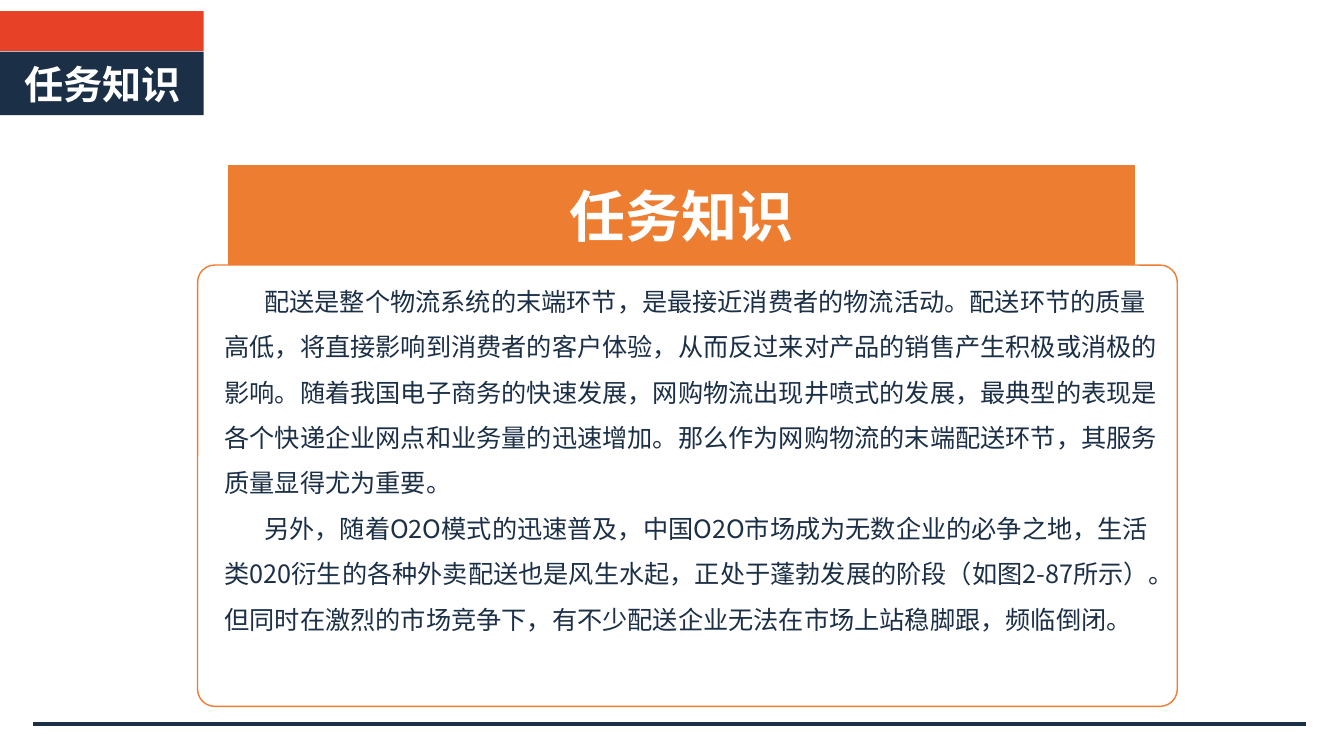
from collections import namedtuple

from lxml.etree import SubElement
from pptx import Presentation
from pptx.dml.color import RGBColor
from pptx.enum.shapes import MSO_CONNECTOR as Connector, MSO_SHAPE as Shape
from pptx.enum.text import MSO_ANCHOR as Anchor, PP_ALIGN as Align
from pptx.oxml.ns import qn
from pptx.util import Cm, Pt

NAVY = RGBColor(0x1B, 0x2F, 0x47)
RED = RGBColor(0xE7, 0x41, 0x27)
ORANGE = RGBColor(0xED, 0x7D, 0x31)
WHITE = RGBColor(0xFF, 0xFF, 0xFF)
FONT = "Noto Sans CJK SC"

HEADING = "任务知识"
PARAGRAPHS = [
    "配送是整个物流系统的末端环节，是最接近消费者的物流活动。配送环节的质量高低，"
    "将直接影响到消费者的客户体验，从而反过来对产品的销售产生积极或消极的影响。"
    "随着我国电子商务的快速发展，网购物流出现井喷式的发展，最典型的表现是各个快递"
    "企业网点和业务量的迅速增加。那么作为网购物流的末端配送环节，其服务质量显得尤为重要。",
    "另外，随着O2O模式的迅速普及，中国O2O市场成为无数企业的必争之地，"
    "生活类020衍生的各种外卖配送也是风生水起，正处于蓬勃发展的阶段（如图2-87所示）。"
    "但同时在激烈的市场竞争下，有不少配送企业无法在市场上站稳脚跟，频临倒闭。",
]

# Lengths in centimetres
Box = namedtuple("Box", "left top width height")


def lengths(box):
    return [Cm(value) for value in box]


def add_span(para, text, size, color, bold=False):
    span = para.add_run()
    span.text = text
    font = span.font
    font.size, font.bold, font.name = Pt(size), bold, FONT
    font.color.rgb = color
    SubElement(font._element, qn("a:ea")).set("typeface", FONT)


def add_panel(page, kind, box, fill, line=None, weight=1, corner=None):
    panel = page.shapes.add_shape(kind, *lengths(box))
    panel.shadow.inherit = False
    panel.fill.solid()
    panel.fill.fore_color.rgb = fill
    if line is None:
        panel.line.fill.background()
    else:
        panel.line.color.rgb = line
        panel.line.width = Pt(weight)
    if corner is not None:
        panel.adjustments[0] = corner
    return panel


def add_corner_tag(page, box):
    """Red strip above a navy label that carries the slide title."""
    strip_height, label_top = 1, 1.02
    add_panel(page, Shape.ROUNDED_RECTANGLE,
              Box(box.left, box.top + label_top, box.width, box.height - label_top),
              NAVY, corner=0)
    add_panel(page, Shape.ROUNDED_RECTANGLE,
              Box(box.left, box.top, box.width, strip_height), RED, corner=0)

    # Title placeholder, raised above the label
    title = page.shapes.title
    title.left, title.top, title.width, title.height = lengths(
        Box(box.left + 0.36, box.top + 1.12, box.width - 0.36, 1.52))
    page.shapes.element.append(title.element)
    frame = title.text_frame
    frame.word_wrap = True
    frame.vertical_anchor = Anchor.TOP
    para = frame.paragraphs[0]
    para.alignment = Align.LEFT
    para.line_spacing = 1.0
    add_span(para, HEADING, 28, WHITE, bold=True)


def add_footer_rule(page, box):
    rule = page.shapes.add_connector(
        Connector.STRAIGHT, Cm(box.left + box.width), Cm(box.top),
        Cm(box.left), Cm(box.top + box.height))
    rule.line.color.rgb = NAVY
    rule.line.width = Pt(3)
    SubElement(rule._element.spPr, qn("a:effectLst"))


def add_article(page, box):
    """Orange banner standing on a rounded frame of body text."""
    banner_height, frame_top = 2.49, 2.51
    frame_box = Box(box.left, box.top + frame_top, box.width, box.height - frame_top)
    add_panel(page, Shape.ROUNDED_RECTANGLE, frame_box, WHITE, ORANGE, corner=0.039)

    # Body text
    body = page.shapes.add_textbox(*lengths(
        Box(box.left + 0.43, frame_box.top + 0.03, box.width - 0.43, 10.64)))
    frame = body.text_frame
    frame.word_wrap = True
    for index, text in enumerate(PARAGRAPHS):
        para = frame.add_paragraph() if index else frame.paragraphs[0]
        para.line_spacing = 1.5
        properties = para._p.get_or_add_pPr()
        properties.set("marL", "0")
        properties.set("indent", str(Cm(1)))
        add_span(para, text, 18, NAVY)

    # Banner
    banner = add_panel(page, Shape.RECTANGLE,
                       Box(box.left + 0.79, box.top, 22.81, banner_height),
                       ORANGE, ORANGE, 0.75)
    banner.text_frame.vertical_anchor = Anchor.MIDDLE
    para = banner.text_frame.paragraphs[0]
    para.alignment = Align.CENTER
    add_span(para, HEADING, 40, WHITE, bold=True)


def main():
    deck = Presentation()
    deck.slide_width, deck.slide_height = Cm(33.87), Cm(19.05)
    page = deck.slides.add_slide(deck.slide_layouts.get_by_name("Title Only"))
    add_corner_tag(page, Box(0, 0.28, 5.13, 2.62))
    add_footer_rule(page, Box(0.84, 18.24, 32.08, 0))
    add_article(page, Box(4.98, 4.17, 24.69, 13.63))
    deck.save("out.pptx")


if __name__ == "__main__":
    main()
